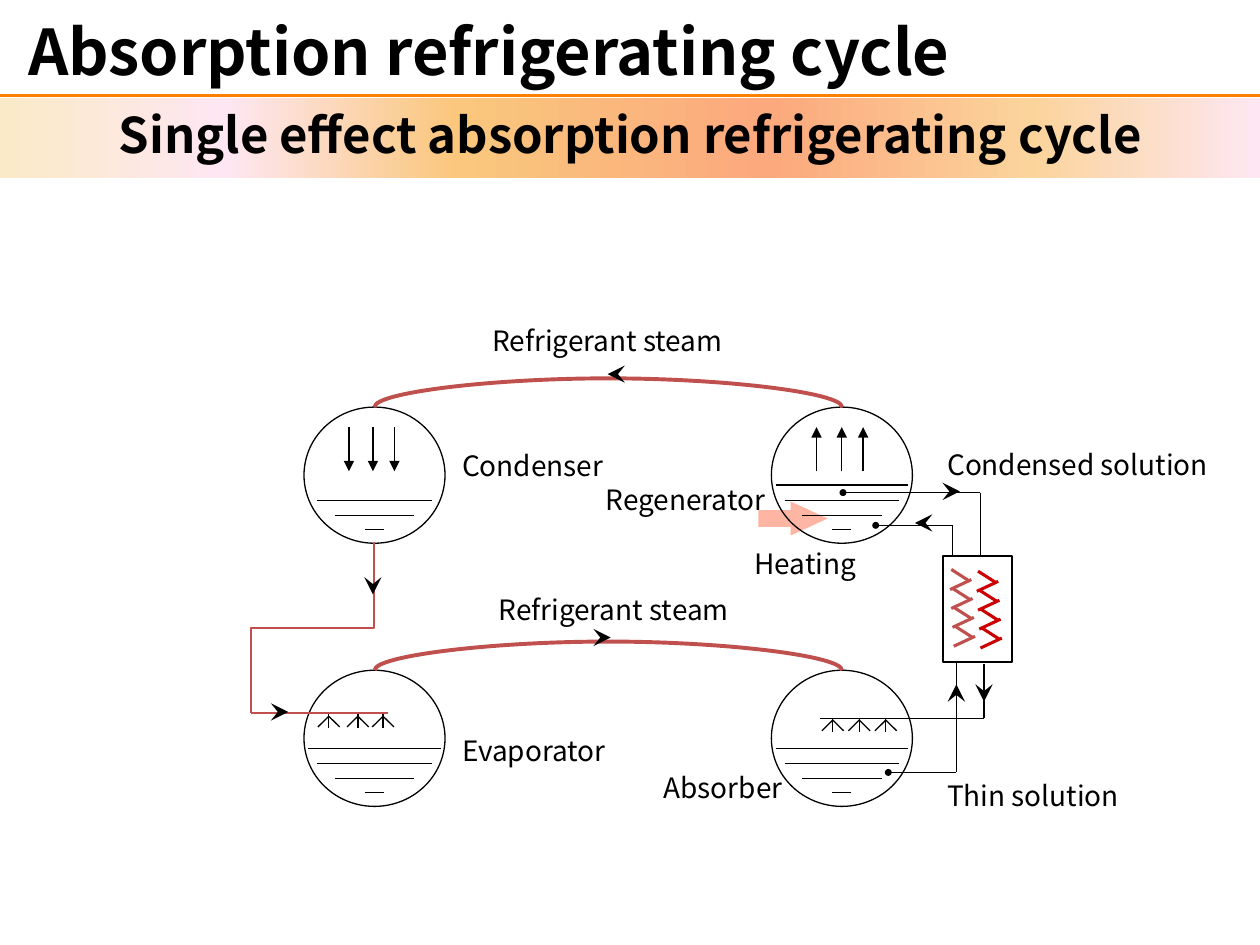
from lxml.etree import SubElement
from pptx import Presentation
from pptx.dml.color import RGBColor
from pptx.enum.shapes import MSO_CONNECTOR, MSO_SHAPE
from pptx.enum.text import MSO_ANCHOR, MSO_AUTO_SIZE, PP_ALIGN
from pptx.oxml.ns import qn
from pptx.util import Pt

BLACK = RGBColor(0, 0, 0)
WHITE = RGBColor(255, 255, 255)
ORANGE = RGBColor(0xFF, 0x80, 0x00)
STEAM = RGBColor(0xC0, 0x50, 0x4D)
HOT = RGBColor(0xCC, 0, 0)
HEAT = RGBColor(0xFF, 0xB5, 0xA3)
FONT = "Noto Sans CJK KR"

TITLE = "Absorption refrigerating cycle"
SUBTITLE = "Single effect absorption refrigerating cycle"
BANNER_STOPS = [(0, "FBEAC7"), (18, "FEE7F2"), (36, "FAC77D"),
                (61, "FBA97D"), (82, "FBD49C"), (100, "FEE7F2")]
LABELS = [
    ("Evaporator", 257, 415.4, 100.8),
    ("Absorber", 372.2, 437, 100.1),
    ("Regenerator", 339.1, 272.2, 106.6),
    ("Condenser", 257, 252.7, 98.6),
    ("Heating", 424.1, 308.9, 77),
    ("Thin solution", 534.2, 441.4, 136.8),
    ("Condensed solution", 534.2, 252, 166.3),
    ("Refrigerant steam", 277.9, 334.8, 163.4),
    ("Refrigerant steam", 274.3, 181.4, 206.6),
]

VESSEL_WIDTH, VESSEL_HEIGHT = 80.6, 77.8
LEFT_VESSEL, RIGHT_VESSEL = 173.7, 440.8
UPPER_VESSEL, LOWER_VESSEL = 232.6, 383
LEVELS = [(75.6, 44.6), (65.5, 53.3), (45.4, 61.9), (10.8, 69.8)]
VESSELS = [
    (LEFT_VESSEL, LOWER_VESSEL, LEVELS),
    (RIGHT_VESSEL, LOWER_VESSEL, LEVELS),
    (LEFT_VESSEL, UPPER_VESSEL, LEVELS[1:]),
    (RIGHT_VESSEL, UPPER_VESSEL, LEVELS),
]
PIPES = [
    (468.7, 410.4, 562.3, 410.4),
    (562.3, 379.4, 562.3, 410.4),
    (560.2, 281.5, 560.2, 317.9),
    (546.5, 378, 546.5, 441.4),
    (544.3, 300.2, 544.3, 317.9),
]
OUTLETS = [
    (481.7, 281.5, 560.2, 281.5),
    (507.6, 441.4, 546.5, 441.4),
    (500.4, 300.2, 544.3, 300.2),
]
VAPOUR = [([466.6, 481, 493.2], 269.3, 244.1), ([199.4, 213.1, 225.4], 244.1, 269.3)]
SPRAYS = [([187.9, 204.5, 218.9], 408.2), ([475.9, 491, 506.2], 410.4)]
NOZZLE = [(0, 0, 0, 7.9), (0, 1.1, -6.2, 7.2), (0, 1.1, 6.2, 7.2)]
COILS = [(558.9, 326.4, HOT), (543.6, 325.4, STEAM)]
COIL_TURN = [(0, 0, 10.1, 6.5), (11.5, 5.8, -0.7, 11.5)]
FLOW_MARKS = [
    (349.2, 213.8, -2, 0), (347, 364.3, 2, 0), (546.5, 393.1, 0, -2),
    (524.9, 298.8, -2, 0), (546.5, 280.8, 2, 0), (562.3, 398.9, 0, 2),
    (213.1, 337.7, 0, 2), (162.7, 406.8, 2, 0),
]

deck = Presentation()
deck.slide_width, deck.slide_height = Pt(720), Pt(540)
page = deck.slides.add_slide(deck.slide_layouts[6])


def connect(ends, color=BLACK, weight=0.75, kind=MSO_CONNECTOR.STRAIGHT):
    connector = page.shapes.add_connector(kind, *[Pt(value) for value in ends])
    connector.line.color.rgb = color
    connector.line.width = Pt(weight)
    SubElement(connector._element.spPr, qn("a:effectLst"))
    return connector


def add_arrowhead(connector, end, style, size="med"):
    line = connector.line._get_or_add_ln()
    SubElement(line, qn(f"a:{end}"), type=style, w=size, len=size)


def turn(connector, degrees, adjustment):
    properties = connector._element.spPr
    properties.xfrm.set("rot", str(degrees * 60000))
    guides = properties.find(qn("a:prstGeom")).get_or_add_avLst()
    SubElement(guides, qn("a:gd"), name="adj1", fmla=f"val {adjustment}")


def add_shape(kind, left, top, width, height, fill=None, weight=None):
    shape = page.shapes.add_shape(kind, Pt(left), Pt(top), Pt(width), Pt(height))
    shape.shadow.inherit = False
    if fill is None:
        shape.fill.background()
    else:
        shape.fill.solid()
        shape.fill.fore_color.rgb = fill
    if weight is None:
        shape.line.fill.background()
    else:
        shape.line.color.rgb = BLACK
        shape.line.width = Pt(weight)
    return shape


def write(box, text, size, bold=False, align=PP_ALIGN.LEFT, anchor=MSO_ANCHOR.TOP):
    frame = box.text_frame
    frame.text = text
    frame.word_wrap = True
    frame.vertical_anchor = anchor
    para = frame.paragraphs[0]
    para.alignment = align
    span = para.runs[0]
    span.font.name = FONT
    span.font.size = Pt(size)
    span.font.bold = bold
    span.font.color.rgb = BLACK
    SubElement(span.font._element, qn("a:ea"), typeface=FONT)


def add_text(left, top, width, height):
    return page.shapes.add_textbox(Pt(left), Pt(top), Pt(width), Pt(height))


connect((0, 54.7, 720, 54.7), ORANGE, 2)
heat_arrow = add_shape(MSO_SHAPE.RIGHT_ARROW, 433.4, 286.6, 39.6, 19.4, HEAT)
heat_arrow.adjustments[0] = 0.49
heat_arrow.adjustments[1] = 1.09

for left, top, levels in VESSELS:
    add_shape(MSO_SHAPE.OVAL, left, top, VESSEL_WIDTH, VESSEL_HEIGHT, weight=0.75)
    for width, depth in levels:
        start = left + (VESSEL_WIDTH - width) / 2
        connect((start, top + depth, start + width, top + depth))

span_width = RIGHT_VESSEL - LEFT_VESSEL
middle = (LEFT_VESSEL + RIGHT_VESSEL + VESSEL_WIDTH) / 2
for top in (LOWER_VESSEL, UPPER_VESSEL):
    ends = (middle, top + span_width / 2, middle + 0.125, top - span_width / 2)
    turn(connect(ends, STEAM, 2.25, MSO_CONNECTOR.CURVE), 90, -14400000)

connect((143.3, 407.5, 221.8, 407.5), STEAM, 1)
turn(connect((129.6, 323.3, 227.5, 393.8), STEAM, 1, MSO_CONNECTOR.ELBOW), 270, 49900)

add_shape(MSO_SHAPE.RECTANGLE, 538.9, 317.9, 39.6, 60.5, WHITE, 1)
for left, top, color in COILS:
    for step in range(4):
        x, y = left + 0.7 * step, top + 10.8 * step
        for x1, y1, x2, y2 in COIL_TURN:
            connect((x + x1, y + y1, x + x2, y + y2), color, 1.75)

for pipe in PIPES:
    connect(pipe)
for outlet in OUTLETS:
    add_arrowhead(connect(outlet), "headEnd", "oval", "sm")
for columns, start, end in VAPOUR:
    for x in columns:
        add_arrowhead(connect((x, start, x, end)), "tailEnd", "triangle")
for columns, y in SPRAYS:
    for x in columns:
        for x1, y1, x2, y2 in NOZZLE:
            connect((x + x1, y + y1, x + x2, y + y2))
for x, y, run, rise in FLOW_MARKS:
    add_arrowhead(connect((x, y, x + run, y + rise)), "tailEnd", "stealth", "lg")

for text, left, top, width in LABELS:
    box = add_text(left, top, width, 26.6)
    write(box, text, 16)
    box.text_frame.auto_size = MSO_AUTO_SIZE.SHAPE_TO_FIT_TEXT

write(add_text(0, 0, 558.7, 56.9), TITLE, 36, True, PP_ALIGN.CENTER, MSO_ANCHOR.MIDDLE)

banner = add_shape(MSO_SHAPE.RECTANGLE, 0, 56.2, 720, 45.4)
banner.fill.gradient()
banner.fill.gradient_angle = 0
stops = banner._element.spPr.find(qn("a:gradFill")).find(qn("a:gsLst"))
for stop in list(stops):
    stops.remove(stop)
for position, color in BANNER_STOPS:
    stop = SubElement(stops, qn("a:gs"), pos=str(position * 1000))
    SubElement(stop, qn("a:srgbClr"), val=color)
write(banner, SUBTITLE, 28, True, PP_ALIGN.CENTER)

deck.save("out.pptx")
